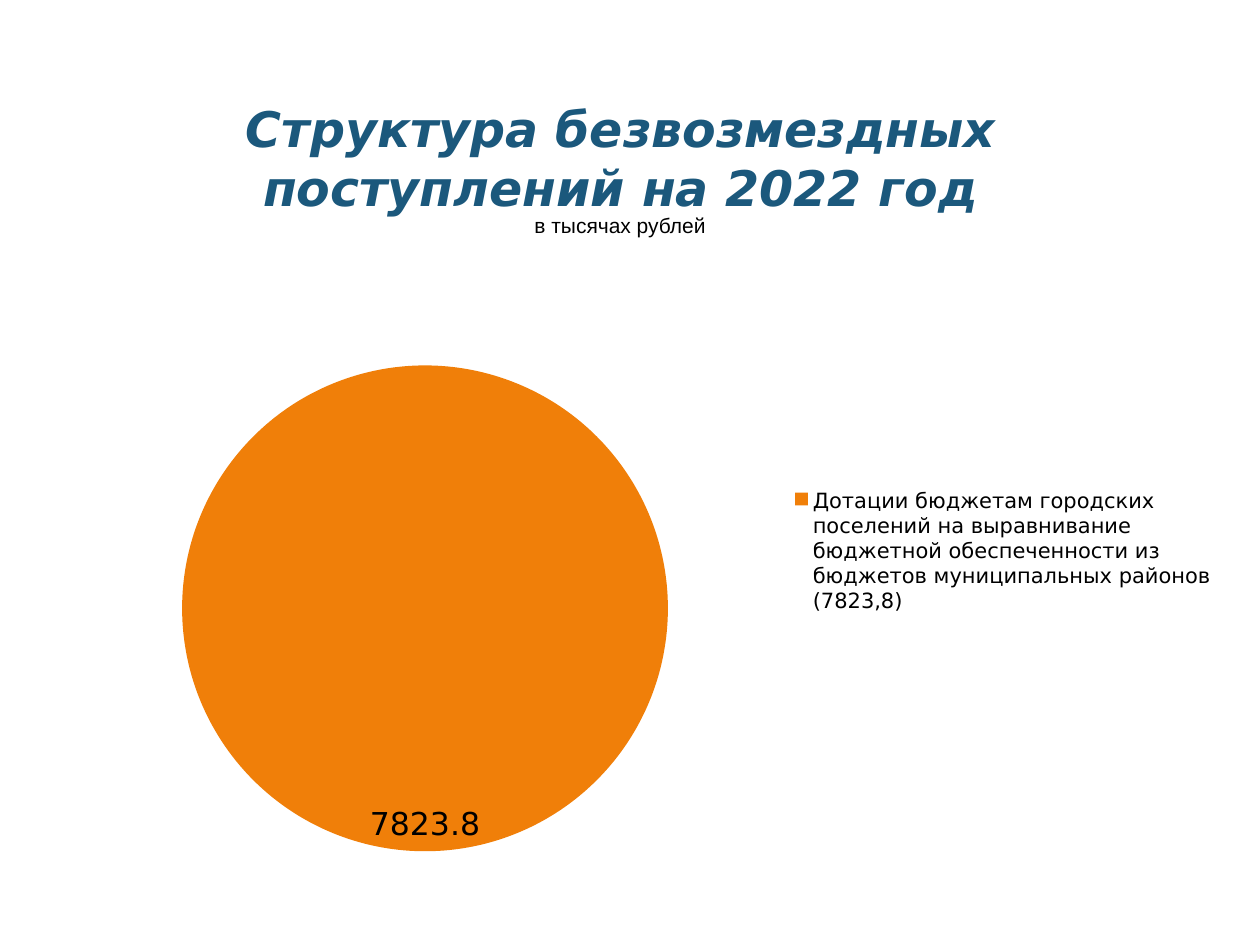
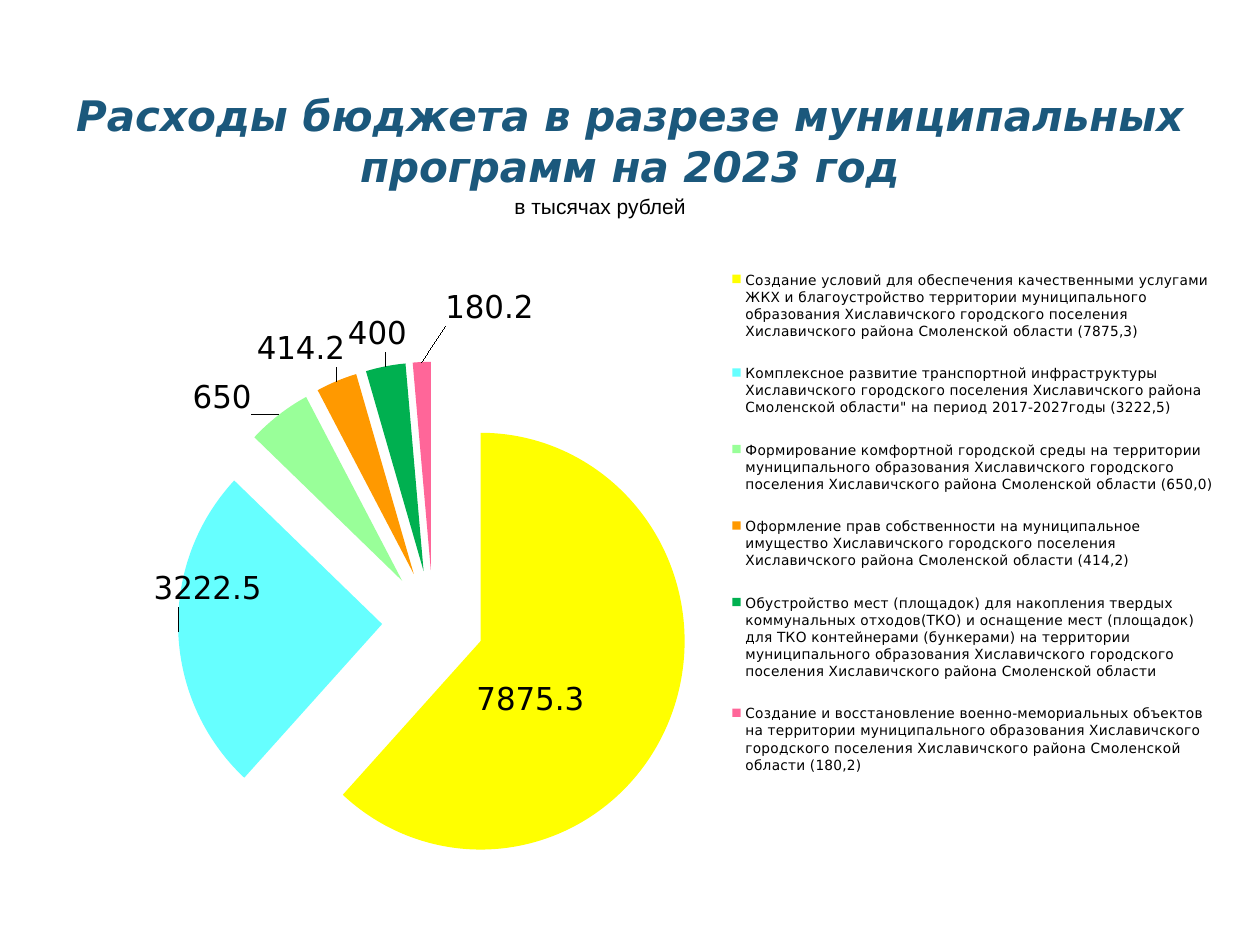
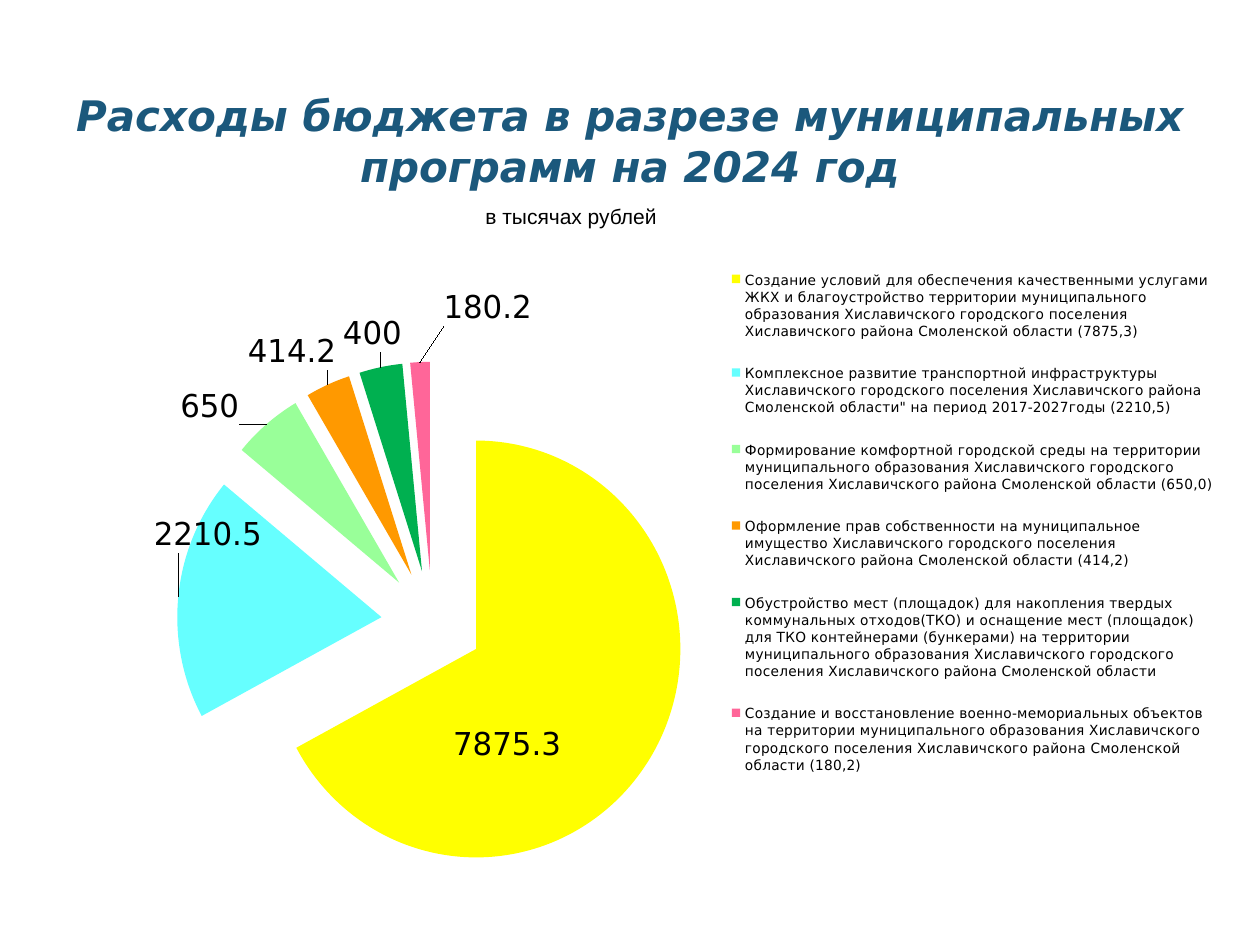
from lxml import etree
from pptx import Presentation
from pptx import util as u
from pptx.chart.data import CategoryChartData
from pptx.dml.color import RGBColor
from pptx.enum import chart as ch, text
from pptx.oxml import ns

PX = 914400 / 126
FONT = "DejaVu Sans"
COLORS = {
    "title": "1B587C", "text": "000000", "grants": "F07F09",
    "housing": "FFFF00", "transport": "66FFFF", "environment": "99FF99",
    "property": "FF9900", "waste": "00B050", "memorials": "FF6699",
}
PROGRAMS = ["housing", "transport", "environment", "property", "waste", "memorials"]
PROGRAM_NAMES = [
    "Создание условий для обеспечения качественными услугами ЖКХ и благоустройство "
    "территории муниципального образования Хиславичского городского поселения "
    "Хиславичского района Смоленской области (7875,3)",
    "Комплексное развитие транспортной инфраструктуры Хиславичского городского поселения "
    "Хиславичского района Смоленской области\" на период 2017-2027годы ({transport})",
    "Формирование комфортной городской среды на территории муниципального образования "
    "Хиславичского городского поселения Хиславичского района Смоленской области (650,0)",
    "Оформление прав собственности на муниципальное имущество Хиславичского городского "
    "поселения Хиславичского района Смоленской области (414,2)",
    "Обустройство мест (площадок) для накопления твердых коммунальных отходов(ТКО) и "
    "оснащение мест (площадок) для ТКО контейнерами (бункерами) на территории "
    "муниципального образования Хиславичского городского поселения Хиславичского района "
    "Смоленской области",
    "Создание и восстановление военно-мемориальных объектов на территории муниципального "
    "образования Хиславичского городского поселения Хиславичского района Смоленской "
    "области (180,2)",
]
GRANTS_NAME = ("Дотации бюджетам городских поселений на выравнивание бюджетной "
               "обеспеченности из бюджетов муниципальных районов (7823,8)")
LABEL = ch.XL_LABEL_POSITION


def emu(box):
    return [round(v * PX) for v in box]


def style(font, color="text", **values):
    for name, value in values.items():
        setattr(font, name, value)
    font.color.rgb = RGBColor.from_string(COLORS[color])


def add_title(s, box, words, size, anchor):
    sp = s.shapes.title
    sp.left, sp.top, sp.width, sp.height = emu(box)
    tf = sp.text_frame
    tf.word_wrap, tf.vertical_anchor = True, anchor
    p = tf.paragraphs[0]
    p.alignment = text.PP_ALIGN.CENTER
    r = p.add_run()
    r.text = words
    style(r.font, "title", name=FONT, size=u.Pt(size), bold=True, italic=True)


def round_corners(sp):
    geometry = etree.Element(ns.qn("a:prstGeom"), prst="roundRect")
    etree.SubElement(geometry, ns.qn("a:avLst"))
    sp.element.spPr.find(ns.qn("a:xfrm")).addnext(geometry)


def add_units(s, left, top):
    tf = s.shapes.add_textbox(*emu((left, top, 197, 38))).text_frame
    r = tf.paragraphs[0].add_run()
    r.text = "в тысячах рублей"
    style(r.font, name="Arial", size=u.Pt(12))


def manual_layout(**values):
    """Layout element whose values are fractions of the chart's size."""
    layout = etree.Element(ns.qn("c:layout"))
    manual = etree.SubElement(layout, ns.qn("c:manualLayout"))
    for name, value in values.items():
        etree.SubElement(manual, ns.qn(f"c:{name}"), val=str(value))
    return layout


def set_frame(parent, index, x, y, w, h, **target):
    for old in parent.findall(ns.qn("c:layout")):
        parent.remove(old)
    parent.insert(index, manual_layout(**target, xMode="edge", yMode="edge",
                                       x=x, y=y, w=w, h=h))


def add_pie(s, box, names, values, keys, legend_size, label_position):
    data = CategoryChartData()
    data.categories = names
    data.add_series("Series 1", values)
    chart = s.shapes.add_chart(ch.XL_CHART_TYPE.PIE_EXPLODED, *emu(box), data).chart
    chart.has_title = False
    style(chart.font, name=FONT, size=u.Pt(18))
    chart.has_legend = True
    chart.legend.position = ch.XL_LEGEND_POSITION.RIGHT
    chart.legend.include_in_layout = False
    style(chart.legend.font, name=FONT, size=u.Pt(legend_size))
    plot = chart.plots[0]
    plot.vary_by_categories = True
    series = plot.series[0]
    for i, key in enumerate(keys):
        fill = series.points[i].format.fill
        fill.solid()
        fill.fore_color.rgb = RGBColor.from_string(COLORS[key])
    labels = series.data_labels
    labels.show_value = True
    labels.position = label_position
    style(labels.font, name=FONT, size=u.Pt(18))
    return chart


def place_frames(chart, pie, legend):
    space = chart._chartSpace
    set_frame(space.xpath(".//c:plotArea")[0], 0, *pie, layoutTarget="inner")
    set_frame(space.xpath(".//c:legend")[0], 1, *legend)


def shift_labels(chart, shifts):
    """Move single labels from their default places and keep each on one line."""
    space = chart._chartSpace
    points = chart.plots[0].series[0].points
    for i, (position, x, y) in shifts.items():
        data_label = points[i].data_label
        style(data_label.font, name=FONT, size=u.Pt(18))
        data_label.position = position
        label = space.xpath(f".//c:dLbl[c:idx/@val='{i}']")[0]
        label.insert(1, manual_layout(x=x, y=y))
    for body in space.xpath(".//c:dLbls//a:bodyPr"):
        body.set("wrap", "none")


def new_slide(prs):
    return prs.slides.add_slide(prs.slide_layouts[5])


def grants_slide(prs):
    s = new_slide(prs)
    add_title(s, (99, 39, 1043, 237), "Структура безвозмездных поступлений на 2022 год",
              28, text.MSO_ANCHOR.MIDDLE)
    round_corners(s.shapes.title)
    chart = add_pie(s, (63, 220, 1168, 649), [GRANTS_NAME], [7823.8], ["grants"], 12,
                    LABEL.INSIDE_END)
    place_frames(chart, (0.05, 0.03, 0.52, 0.95), (0.62, 0.4, 0.37, 0.22))
    add_units(s, 522, 206)


def programs_slide(prs, year, transport, units_at, housing_shift, transport_shift):
    s = new_slide(prs)
    add_title(s, (63, 19, 1134, 178),
              f"Расходы бюджета в разрезе муниципальных программ на {year} год",
              24, text.MSO_ANCHOR.BOTTOM)
    shown = str(transport).replace(".", ",")
    names = [name.format(transport=shown) for name in PROGRAM_NAMES]
    values = [7875.3, transport, 650, 414.2, 400, 180.2]
    chart = add_pie(s, (63, 197, 1158, 709), names, values, PROGRAMS, 8,
                    LABEL.OUTSIDE_END)
    place_frames(chart, (0.08, 0.23, 0.45, 0.74), (0.57, 0.07, 0.43, 0.78))
    shift_labels(chart, {
        0: (LABEL.CENTER, *housing_shift),
        1: (LABEL.OUTSIDE_END, *transport_shift),
        2: (LABEL.OUTSIDE_END, -0.02, 0.01),
        3: (LABEL.OUTSIDE_END, 0.01, -0.01),
        4: (LABEL.OUTSIDE_END, 0.02, -0.01),
        5: (LABEL.OUTSIDE_END, 0.06, -0.04),
    })
    add_units(s, *units_at)


def main():
    prs = Presentation()
    prs.slide_width, prs.slide_height = emu((1260, 945))
    grants_slide(prs)
    programs_slide(prs, 2023, 3222.5, (502, 187), (-0.04, 0.03), (0.08, -0.06))
    programs_slide(prs, 2024, 2210.5, (473, 197), (-0.05, 0.06), (0.08, -0.06))
    prs.save("out.pptx")


if __name__ == "__main__":
    main()
